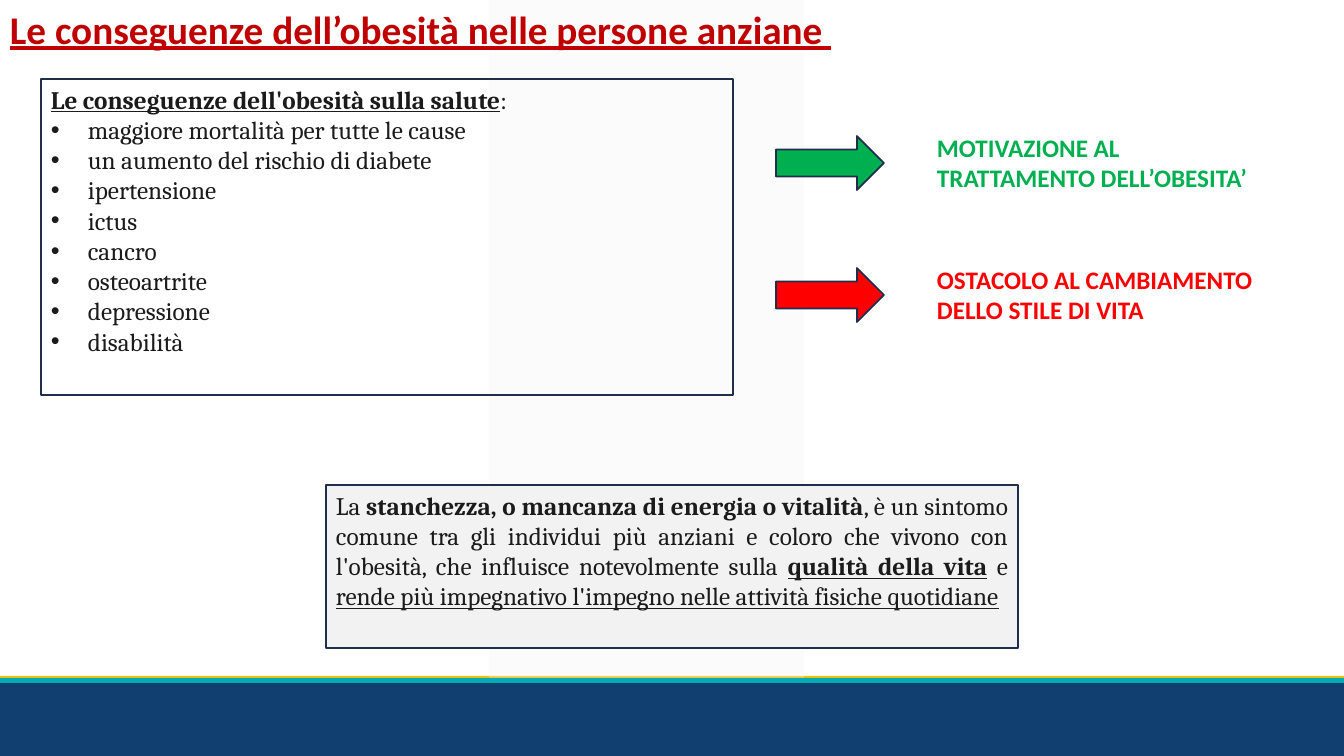
from dataclasses import dataclass

from lxml import etree
from pptx import Presentation
from pptx.dml.color import RGBColor
from pptx.enum.shapes import MSO_SHAPE
from pptx.enum.text import MSO_ANCHOR, PP_ALIGN
from pptx.oxml.ns import qn
from pptx.util import Emu, Pt

SCALE = 12192000 / 1344
RECTANGLE = MSO_SHAPE.RECTANGLE
PARALLELOGRAM = MSO_SHAPE.PARALLELOGRAM
RIGHT_ARROW = MSO_SHAPE.RIGHT_ARROW
TOP = MSO_ANCHOR.TOP
LEFT = PP_ALIGN.LEFT
JUSTIFY = PP_ALIGN.JUSTIFY


@dataclass(frozen=True)
class Theme:
    """Colours, fonts and type sizes of the slide."""
    navy: str = "113F6F"
    teal: str = "00ACB6"
    gold: str = "FFC000"
    grey: str = "F2F2F2"
    outline: str = "202D4B"
    ink: str = "1B1B1B"
    title: str = "C00000"
    green: str = "00B050"
    red: str = "FF0000"
    sans: str = "Calibri"
    serif: str = "Cambria"
    title_size: int = 28
    body_size: int = 18


THEME = Theme()
HEALTH_EFFECTS = [
    "maggiore mortalità per tutte le cause",
    "un aumento del rischio di diabete",
    "ipertensione",
    "ictus",
    "cancro",
    "osteoartrite",
    "depressione",
    "disabilità",
]
FATIGUE = [
    ("La ", ""),
    ("stanchezza, o mancanza di energia o vitalità", "b"),
    (", è un sintomo comune tra gli individui più anziani e coloro che vivono "
     "con l'obesità, che influisce notevolmente sulla ", ""),
    ("qualità della vita", "bu"),
    (" e ", ""),
    ("rende più impegnativo l'impegno nelle attività fisiche quotidiane", "u"),
]
OUTCOMES = [
    ("MOTIVAZIONE AL TRATTAMENTO DELL’OBESITA’", THEME.green, 356),
    ("OSTACOLO AL CAMBIAMENTO DELLO STILE DI VITA", THEME.red, 342),
]


def px(length):
    """Turn pixels into EMU."""
    return Emu(round(length * SCALE))


def add_block(page, kind, place, fill=None, line_width=None):
    """Add a preset shape with an optional fill and outline."""
    block = page.shapes.add_shape(kind, *map(px, place))
    block.shadow.inherit = False
    if fill:
        block.fill.solid()
        block.fill.fore_color.rgb = RGBColor.from_string(fill)
    else:
        block.fill.background()
    if line_width:
        block.line.color.rgb = RGBColor.from_string(THEME.outline)
        block.line.width = Pt(line_width)
    else:
        block.line.fill.background()
    return block


def add_label(page, place):
    """Add an empty text box that wraps."""
    label = page.shapes.add_textbox(*map(px, place))
    label.text_frame.word_wrap = True
    return label


def add_spans(para, spans, font, size, colour):
    """Write runs whose style letters are b for bold and u for underlined."""
    for text, style in spans:
        span = para.add_run()
        span.text = text
        span.font.name = font
        span.font.size = Pt(size)
        span.font.color.rgb = RGBColor.from_string(colour)
        span.font.bold = "b" in style
        span.font.underline = "u" in style


def add_bullet(para, indent):
    """Give a paragraph a hanging round bullet."""
    properties = para._p.get_or_add_pPr()
    properties.set("marL", str(px(indent)))
    properties.set("indent", str(-px(indent)))
    etree.SubElement(properties, qn("a:buFont")).set("typeface", "Arial")
    etree.SubElement(properties, qn("a:buChar")).set("char", "•")


def add_panel(page, place, fill, align, paragraphs):
    """Add an outlined serif panel; paragraphs after the first are bulleted."""
    panel = add_block(page, RECTANGLE, place, fill, 1.5)
    frame = panel.text_frame
    frame.word_wrap = True
    frame.vertical_anchor = TOP
    for index, spans in enumerate(paragraphs):
        para = frame.add_paragraph() if index else frame.paragraphs[0]
        para.alignment = align
        if index:
            add_bullet(para, 37)
        add_spans(para, spans, THEME.serif, THEME.body_size, THEME.ink)


def add_backdrop(page):
    """Draw the footer bands and the pale vertical band."""
    add_block(page, RECTANGLE, (0, 676, 1344, 5), THEME.gold)
    add_block(page, RECTANGLE, (0, 680, 1344, 76), THEME.navy)
    band = add_block(page, PARALLELOGRAM, (489, 0, 315, 680), THEME.grey)
    band.adjustments[0] = 0
    colour = band.fill._xPr.find(qn("a:solidFill"))[0]
    etree.SubElement(colour, qn("a:alpha")).set("val", "30000")
    add_block(page, RECTANGLE, (0, 678, 1344, 5), THEME.teal)


def add_outcome(page, top, text, colour, width):
    """Add an arrow and the outcome it points to."""
    add_block(page, RIGHT_ARROW, (776, top, 108, 54), colour, 1.25)
    label = add_label(page, (927, top - 9, width, 72))
    add_spans(label.text_frame.paragraphs[0], [(text, "b")],
              THEME.sans, THEME.body_size, colour)


def main():
    """Build and save the slide."""
    deck = Presentation()
    deck.slide_width, deck.slide_height = px(1344), px(756)
    page = deck.slides.add_slide(deck.slide_layouts[6])
    add_backdrop(page)
    title = add_label(page, (0, 0, 1344, 57))
    add_spans(title.text_frame.paragraphs[0],
              [("Le conseguenze dell’obesità nelle persone anziane ", "bu")],
              THEME.sans, THEME.title_size, THEME.title)
    add_panel(page, (326, 485, 692, 163), THEME.grey, JUSTIFY, [FATIGUE])
    heading = [("Le conseguenze dell'obesità sulla salute", "bu"), (":", "")]
    add_panel(page, (41, 79, 692, 316), None, LEFT,
              [heading] + [[(effect, "")] for effect in HEALTH_EFFECTS])
    for index, outcome in enumerate(OUTCOMES):
        add_outcome(page, 136 + 132 * index, *outcome)
    deck.save("out.pptx")


if __name__ == "__main__":
    main()
